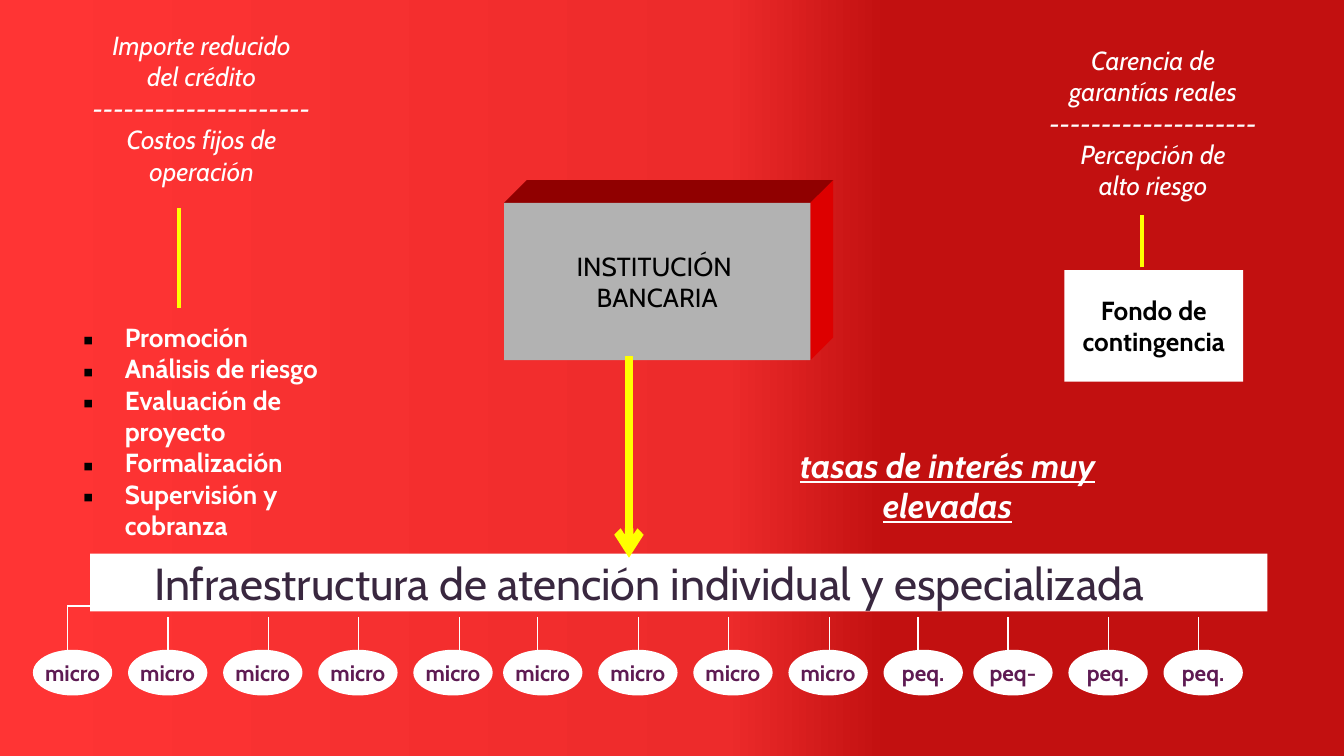
from lxml import etree
from pptx import Presentation
from pptx.dml.color import RGBColor
from pptx.enum.shapes import MSO_CONNECTOR, MSO_SHAPE
from pptx.enum.text import MSO_ANCHOR, PP_ALIGN
from pptx.oxml import parse_xml
from pptx.oxml.ns import nsdecls, qn
from pptx.util import Inches, Pt

COLORS = {
    "white": "FFFFFF", "black": "000000", "yellow": "FFFF00",
    "plum": "5E1B53", "ink": "39273F", "gray": "B2B2B2",
    "block_top": "900000", "block_side": "DD0000",
}
BACKGROUND_STOPS = [(34, "C21010"), (46, "ED2B2B"), (99, "FF3434")]
FONT = "Cabin"
TASKS = ["Promoción", "Análisis de riesgo", "Evaluación de", "proyecto",
         "Formalización", "Supervisión y", "cobranza"]
CONTINUATIONS = {"proyecto", "cobranza"}
CLIENTS = ["micro"] * 9 + ["peq.", "peq-", "peq.", "peq."]
STEMS = [1.25, 2, 2.67, 3.42, 4, 4.75, 5.42, 6.17, 6.83, 7.5, 8.25, 8.92]


def color(name):
    return RGBColor.from_string(COLORS[name])


def write(shape, text, size=14, ink="white", bold=False, italic=False,
          underline=False, align=PP_ALIGN.CENTER, anchor=MSO_ANCHOR.TOP, wrap=True):
    frame = shape.text_frame
    frame.word_wrap = wrap
    frame.vertical_anchor = anchor
    frame.text = text
    for para in frame.paragraphs:
        para.alignment = align
        for span in para.runs:
            font = span.font
            font.name, font.size = FONT, Pt(size)
            font.bold, font.italic, font.underline = bold, italic, underline
            font.color.rgb = color(ink)
    return frame


def add_text(page, box, text, **style):
    return write(page.shapes.add_textbox(*map(Inches, box)), text, **style)


def paint(shape, fill, line=None):
    shape.shadow.inherit = False
    shape.fill.solid()
    shape.fill.fore_color.rgb = color(fill)
    if line:
        shape.line.color.rgb = color(line)
        shape.line.width = Pt(0.75)
    else:
        shape.line.fill.background()


def add_panel(page, kind, box, fill="white", line=None):
    shape = page.shapes.add_shape(kind, *map(Inches, box))
    paint(shape, fill, line)
    return shape


def add_line(page, start, end, ink="white", width=0.75, arrow=False):
    line = page.shapes.add_connector(MSO_CONNECTOR.STRAIGHT, *map(Inches, start + end))
    line.line.color.rgb = color(ink)
    line.line.width = Pt(width)
    if arrow:
        etree.SubElement(line.line._get_or_add_ln(), qn("a:tailEnd"), type="arrow")
    etree.SubElement(line._element.spPr, qn("a:effectLst"))


def add_face(page, points, fill):
    start, *rest = [(Inches(x), Inches(y)) for x, y in points]
    builder = page.shapes.build_freeform(*start)
    builder.add_line_segments(rest, close=True)
    paint(builder.convert_to_shape(), fill)


def paint_background(page):
    fill = page.background.fill
    fill.gradient()
    fill.gradient_angle = 180
    stops = page.background._cSld.find(".//" + qn("a:gsLst"))
    for stop in list(stops):
        stops.remove(stop)
    for position, shade in BACKGROUND_STOPS:
        stops.append(parse_xml(
            f'<a:gs {nsdecls("a")} pos="{position * 1000}"><a:srgbClr val="{shade}"/></a:gs>'))


def add_ratio(page, box, top, dashes, bottom):
    """One problem over another, parted by a row of dashes."""
    add_text(page, box, "\n".join([top, "-" * dashes, bottom]), italic=True)


def add_tasks(page, box):
    frame = add_text(page, box, "\n".join(TASKS), bold=True, align=PP_ALIGN.LEFT)
    for para in frame.paragraphs:
        props = para._p.get_or_add_pPr()
        props.set("marL", str(Inches(0.31)))
        if para.text in CONTINUATIONS:
            continue
        props.set("indent", str(-Inches(0.31)))
        bullet_color = etree.SubElement(props, qn("a:buClr"))
        etree.SubElement(bullet_color, qn("a:srgbClr"), val=COLORS["black"])
        etree.SubElement(props, qn("a:buFont"), typeface="Noto Sans Symbols")
        etree.SubElement(props, qn("a:buChar"), char="▪")


def add_bank(page, box, depth=0.17):
    left, top, width, height = box
    right, bottom = left + width, top + height
    add_face(page, [(left, top), (left + depth, top - depth),
                    (right + depth, top - depth), (right, top)], "block_top")
    add_face(page, [(right, top), (right + depth, top - depth),
                    (right + depth, bottom - depth), (right, bottom)], "block_side")
    front = add_panel(page, MSO_SHAPE.RECTANGLE, box, "gray")
    write(front, "INSTITUCIÓN \nBANCARIA", ink="black",
          anchor=MSO_ANCHOR.MIDDLE, wrap=False)


def add_fund(page, box):
    panel = add_panel(page, MSO_SHAPE.RECTANGLE, box)
    write(panel, "Fondo de\ncontingencia", ink="black", bold=True,
          anchor=MSO_ANCHOR.MIDDLE, wrap=False)


def add_infrastructure(page, box):
    left, top, width, height = box
    add_panel(page, MSO_SHAPE.RECTANGLE, box)
    add_text(page, (left - 0.09, top, width - 0.26, height),
             "Infraestructura de atención individual y especializada",
             size=24, ink="ink", anchor=MSO_ANCHOR.MIDDLE)


def add_clients(page, box):
    left, top, width, height = box
    # Stems up to the bar; the first one bends in from the side
    for x in STEMS:
        add_line(page, (x, top), (x, top - 0.25))
    add_line(page, (left + 0.25, top), (left + 0.25, top - 0.33))
    add_line(page, (left + 0.25, top - 0.33), (left + 0.42, top - 0.33))
    # Ovals in groups of five, with a slightly closer gap between groups
    for index, name in enumerate(CLIENTS):
        x = left + index * width / len(CLIENTS) - 0.04 * (index // 5)
        oval = add_panel(page, MSO_SHAPE.OVAL, (x, top, 0.58, height), line="white")
        write(oval, name, size=12, ink="plum", bold=True,
              anchor=MSO_ANCHOR.MIDDLE, wrap=False)


def main():
    deck = Presentation()
    deck.slide_width, deck.slide_height = Inches(10), Inches(10 * 9 / 16)
    page = deck.slides.add_slide(deck.slide_layouts[6])
    paint_background(page)

    # Left column: operating costs
    add_ratio(page, (-0.04, 0.17, 3.08, 1.28), "Importe reducido\ndel crédito", 21,
              "Costos fijos de\noperación")
    add_line(page, (1.33, 2.29), (1.33, 1.55), "yellow", 2.25)
    add_tasks(page, (0.52, 2.34, 1.98, 1.75))

    # Bottom: infrastructure and its clients
    add_infrastructure(page, (0.67, 4.12, 8.76, 0.43))
    add_clients(page, (0.25, 4.84, 9.2, 0.33))

    # Centre: bank and its rates
    add_bank(page, (3.75, 1.51, 2.28, 1.17))
    add_line(page, (4.68, 2.65), (4.68, 4.15), "yellow", 4.5, arrow=True)
    add_text(page, (5.75, 3.26, 2.6, 0.7), "tasas de interés muy elevadas",
             size=18, bold=True, italic=True, underline=True)

    # Right column: risk
    add_ratio(page, (7.29, 0.28, 2.58, 1.28), "Carencia de\ngarantías reales", 20,
              "Percepción de\nalto riesgo")
    add_line(page, (8.5, 1.99), (8.5, 1.6), "yellow", 2.25)
    add_fund(page, (7.92, 2.01, 1.33, 0.83))

    deck.save("out.pptx")


if __name__ == "__main__":
    main()
